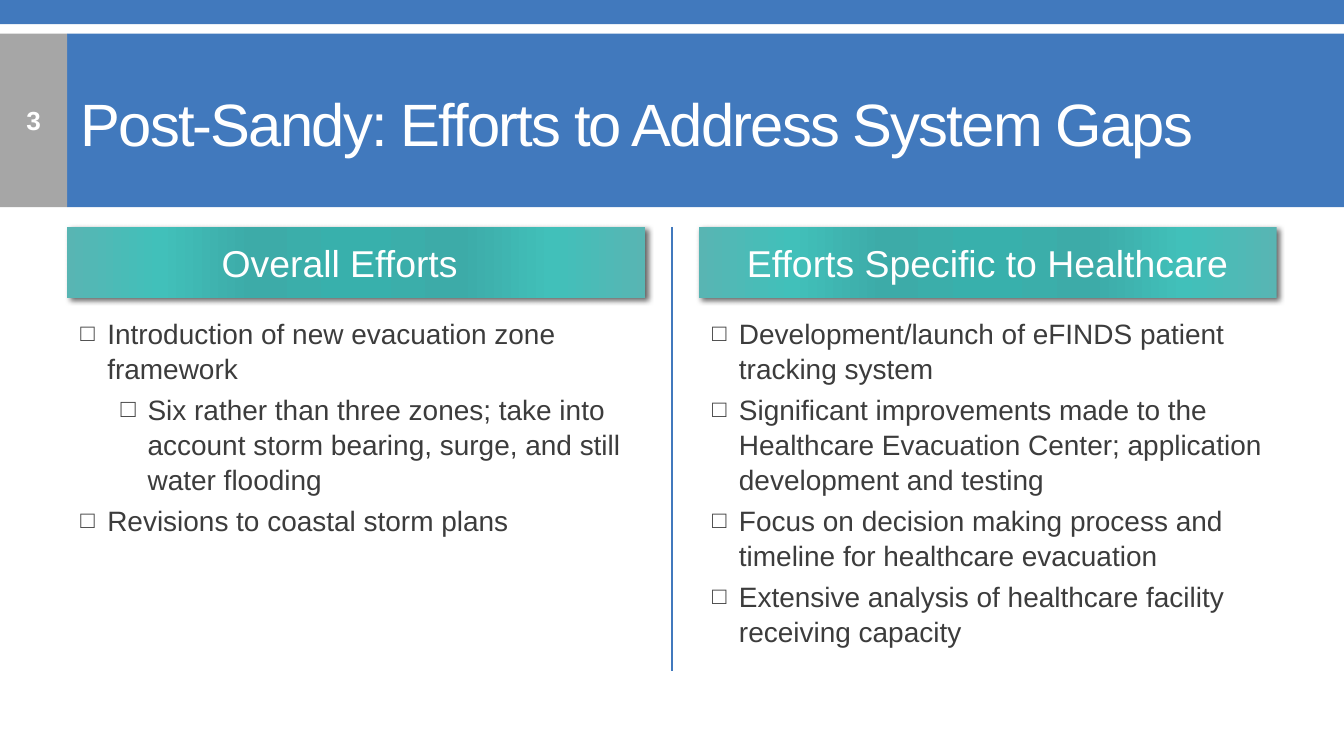
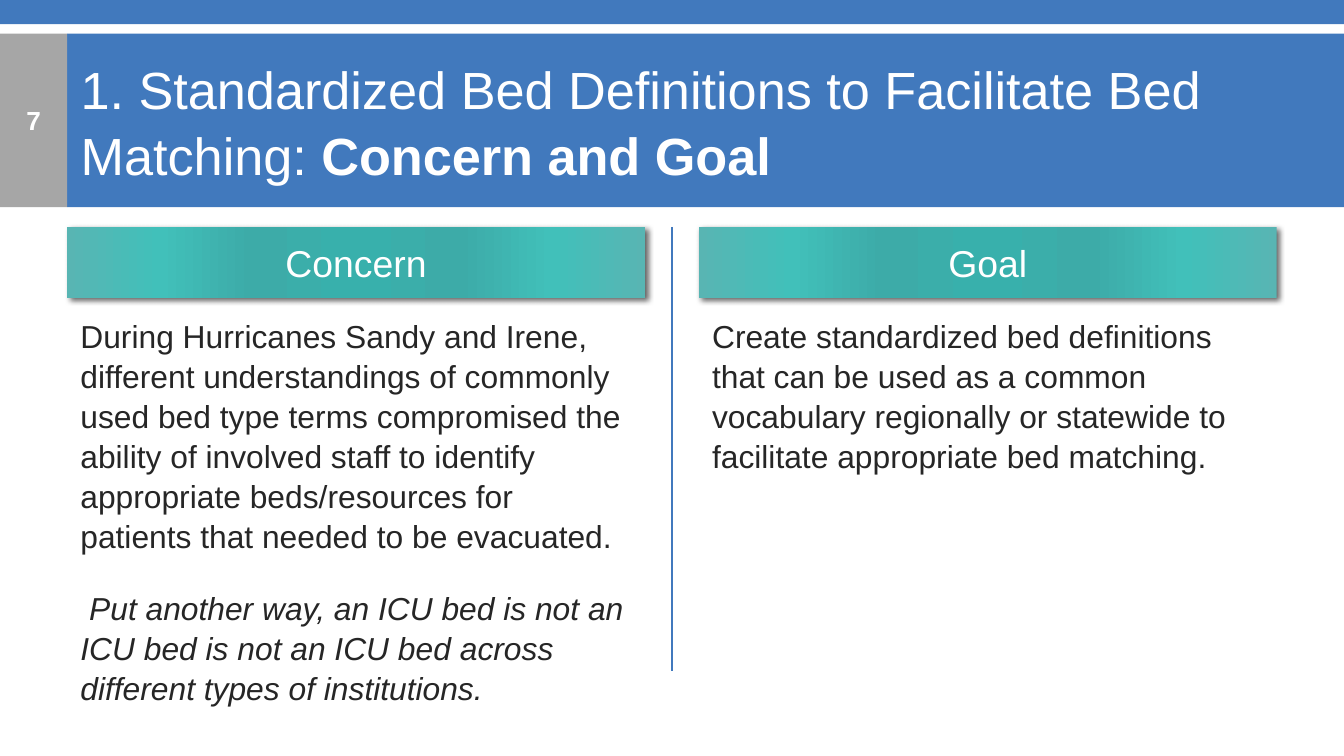
from lxml import etree
from pptx import Presentation
from pptx.dml.color import RGBColor
from pptx.enum import shapes, text
from pptx.oxml import parse_xml
from pptx.oxml import ns
from pptx.util import Pt

BLUE = RGBColor(0x41, 0x79, 0xBD)
GRAY = RGBColor(0xA6, 0xA6, 0xA6)
WHITE = RGBColor(0xFF, 0xFF, 0xFF)
BULLET = RGBColor(0x3F, 0x3F, 0x3F)
BULLET_TEXT = RGBColor(0x3C, 0x3C, 0x3C)
PROSE_TEXT = RGBColor(0x26, 0x26, 0x26)
EDGE_TEAL = RGBColor(0x58, 0xB5, 0xB3)
BRIGHT_TEAL = RGBColor(0x41, 0xC0, 0xBA)
DEEP_TEAL = RGBColor(0x3D, 0xAB, 0xA8)
MIDDLE_TEAL = RGBColor(0x38, 0xB0, 0xAC)
HEADER_STOPS = [(0, EDGE_TEAL), (16, BRIGHT_TEAL), (32, DEEP_TEAL), (50, MIDDLE_TEAL),
                (68, DEEP_TEAL), (84, BRIGHT_TEAL), (100, EDGE_TEAL)]

FONT = "Arial"
DRAWING = ns.nsdecls("a")
SLIDE_WIDTH, SLIDE_HEIGHT = 720, 405
BAND_TOP, BAND_HEIGHT = 18, 93
MARGIN = 36
COLUMN_TOP, COLUMN_WIDTH, COLUMN_HEIGHT = 121.5, 309.6, 238
HEADER_HEIGHT, HEADER_GAP = 38, 5.5
COLUMN_LEFTS = (MARGIN, SLIDE_WIDTH - MARGIN - COLUMN_WIDTH)


def style_run(run, size, color, bold=False, italic=False):
    run.font.name = FONT
    run.font.size = Pt(size)
    run.font.color.rgb = color
    run.font.bold = bold
    run.font.italic = italic


def add_box(slide, box, fill):
    left, top, width, height = map(Pt, box)
    shape = slide.shapes.add_shape(shapes.MSO_SHAPE.RECTANGLE, left, top, width, height)
    shape.shadow.inherit = False
    shape.fill.solid()
    shape.fill.fore_color.rgb = fill
    shape.line.fill.background()
    return shape


def set_centered_text(shape, words, size, bold=False):
    frame = shape.text_frame
    frame.text = words
    frame.vertical_anchor = text.MSO_ANCHOR.MIDDLE
    frame.paragraphs[0].alignment = text.PP_ALIGN.CENTER
    style_run(frame.paragraphs[0].runs[0], size, WHITE, bold)


def add_title_band(slide, box, number, title_runs, size, spacing):
    left, top, width, height = box
    add_box(slide, (0, 0, SLIDE_WIDTH, 13), BLUE)
    number_box = add_box(slide, (left, top, MARGIN, height), GRAY)
    number_box.text_frame.margin_left = number_box.text_frame.margin_right = 0
    set_centered_text(number_box, number, 14, True)
    title = slide.shapes.title
    title.left, title.top = Pt(left + MARGIN), Pt(top)
    title.width, title.height = Pt(width - MARGIN), Pt(height)
    title.fill.solid()
    title.fill.fore_color.rgb = BLUE
    frame = title.text_frame
    frame.word_wrap = True
    frame.auto_size = text.MSO_AUTO_SIZE.NONE
    frame.vertical_anchor = text.MSO_ANCHOR.MIDDLE
    paragraph = frame.paragraphs[0]
    paragraph.alignment = text.PP_ALIGN.LEFT
    paragraph.line_spacing = 1.05
    for words, bold in title_runs:
        run = paragraph.add_run()
        run.text = words
        style_run(run, size, WHITE, bold)
        run.font._element.set("spc", str(spacing * 100))


def add_header(slide, box, words, extra_right):
    header = add_box(slide, box, BLUE)
    stops = "".join(f'<a:gs pos="{position * 1000}"><a:srgbClr val="{color}"/></a:gs>'
                    for position, color in HEADER_STOPS)
    gradient = parse_xml(f'<a:gradFill {DRAWING} rotWithShape="1"><a:gsLst>{stops}</a:gsLst>'
                         '<a:lin ang="0" scaled="0"/></a:gradFill>')
    properties = header._element.spPr
    properties.replace(properties.find(ns.qn("a:solidFill")), gradient)
    properties.find(ns.qn("a:effectLst")).append(parse_xml(
        f'<a:outerShdw {DRAWING} blurRad="{Pt(3)}" dist="{Pt(2)}" dir="2700000" '
        'algn="tl" rotWithShape="0"><a:srgbClr val="000000"><a:alpha val="60000"/>'
        '</a:srgbClr></a:outerShdw>'))
    header.text_frame.margin_right = Pt(7.2 + extra_right)
    set_centered_text(header, words, 20)


def add_bullet(paragraph, level):
    properties = paragraph._p.get_or_add_pPr()
    properties.set("marL", str(Pt(14.4 + 21.6 * level)))
    properties.set("indent", str(Pt(-14.4)))
    for markup in (f'<a:buClr {DRAWING}><a:srgbClr val="{BULLET}"/></a:buClr>',
                   f'<a:buSzPct {DRAWING} val="{85000 + 5000 * level}"/>',
                   f'<a:buFont {DRAWING} typeface="{FONT}"/>',
                   f'<a:buChar {DRAWING} char="□"/>'):
        properties.append(parse_xml(markup))


def add_body(slide, box, fill_paragraphs, content):
    frame = slide.shapes.add_textbox(*map(Pt, box)).text_frame
    frame.word_wrap = True
    for index, item in enumerate(content):
        paragraph = frame.paragraphs[0] if index == 0 else frame.add_paragraph()
        paragraph.line_spacing = 1.05
        fill_paragraphs(paragraph, index, item)


def fill_bullet(paragraph, index, item):
    level, words = item
    paragraph.text = words
    add_bullet(paragraph, level)
    if index:
        paragraph.space_before = Pt(3)
    style_run(paragraph.runs[0], 15, BULLET_TEXT)


def fill_prose(paragraph, index, words):
    paragraph.text = words
    if index:
        paragraph.space_before = Pt(17.5)
        paragraph._p.get_or_add_pPr().set("indent", str(Pt(4.7)))
    style_run(paragraph.runs[0], 17, PROSE_TEXT, italic=index > 0)


def add_column(slide, box, header, extra_right, fill_paragraphs, content):
    left, top, width, height = box
    add_header(slide, (left, top, width, HEADER_HEIGHT), header, extra_right)
    offset = HEADER_HEIGHT + HEADER_GAP
    add_body(slide, (left, top + offset, width, height - offset), fill_paragraphs, content)


def add_divider(slide, x, top, height):
    line = slide.shapes.add_connector(shapes.MSO_CONNECTOR.STRAIGHT,
                                      Pt(x), Pt(top), Pt(x), Pt(top + height))
    line.line.color.rgb = BLUE
    line.line.width = Pt(1.5)
    etree.SubElement(line._element.spPr, ns.qn("a:effectLst"))


def add_comparison_slide(presentation, number, title_runs, size, spacing,
                         fill_paragraphs, columns):
    slide = presentation.slides.add_slide(presentation.slide_layouts[5])
    add_title_band(slide, (0, BAND_TOP, SLIDE_WIDTH, BAND_HEIGHT),
                   number, title_runs, size, spacing)
    add_divider(slide, SLIDE_WIDTH / 2, COLUMN_TOP, COLUMN_HEIGHT)
    for left, (header, extra_right, content) in zip(COLUMN_LEFTS, columns):
        add_column(slide, (left, COLUMN_TOP, COLUMN_WIDTH, COLUMN_HEIGHT),
                   header, extra_right, fill_paragraphs, content)


def main():
    presentation = Presentation()
    presentation.slide_width = Pt(SLIDE_WIDTH)
    presentation.slide_height = Pt(SLIDE_HEIGHT)
    add_comparison_slide(
        presentation, "3", [("Post-Sandy: Efforts to Address System Gaps", False)], 32, -1,
        fill_bullet, [
            ("Overall Efforts", 17.5, [
                (0, "Introduction of new evacuation zone framework"),
                (1, "Six rather than three zones; take into account storm bearing, "
                    "surge, and still water flooding"),
                (0, "Revisions to coastal storm plans")]),
            ("Efforts Specific to Healthcare", 0, [
                (0, "Development/launch of eFINDS patient tracking system"),
                (0, "Significant improvements made to the Healthcare Evacuation Center; "
                    "application development and testing"),
                (0, "Focus on decision making process and timeline for healthcare evacuation"),
                (0, "Extensive analysis of healthcare facility receiving capacity")])])
    add_comparison_slide(
        presentation, "7",
        [("1. Standardized Bed Definitions to Facilitate Bed Matching: ", False),
         ("Concern and Goal", True)], 28, 0,
        fill_prose, [
            ("Concern", 0, [
                "During Hurricanes Sandy and Irene, different understandings of commonly used "
                "bed type terms compromised the ability of involved staff to identify "
                "appropriate beds/resources for patients that needed to be evacuated.",
                "Put another way, an ICU bed is not an ICU bed is not an ICU bed across "
                "different types of institutions."]),
            ("Goal", 0, [
                "Create standardized bed definitions that can be used as a common vocabulary "
                "regionally or statewide to facilitate appropriate bed matching."])])
    presentation.save("out.pptx")


if __name__ == "__main__":
    main()
